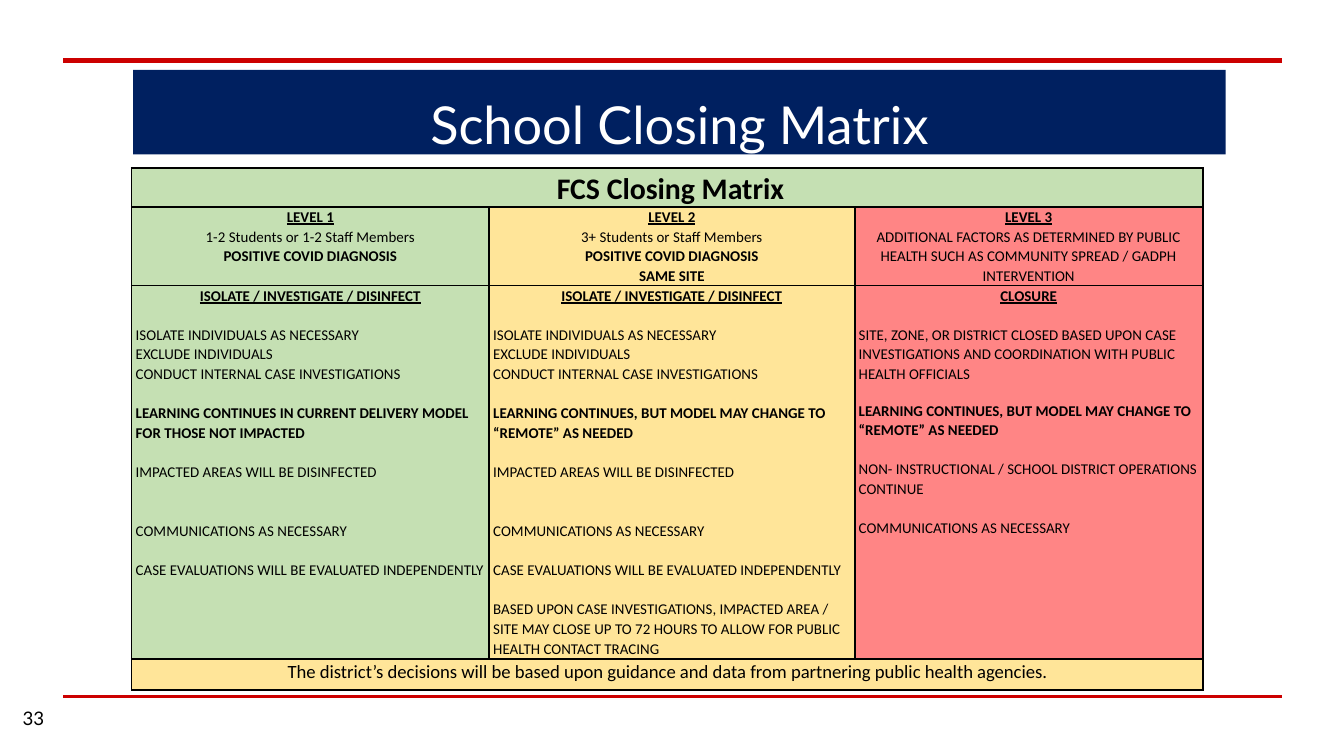
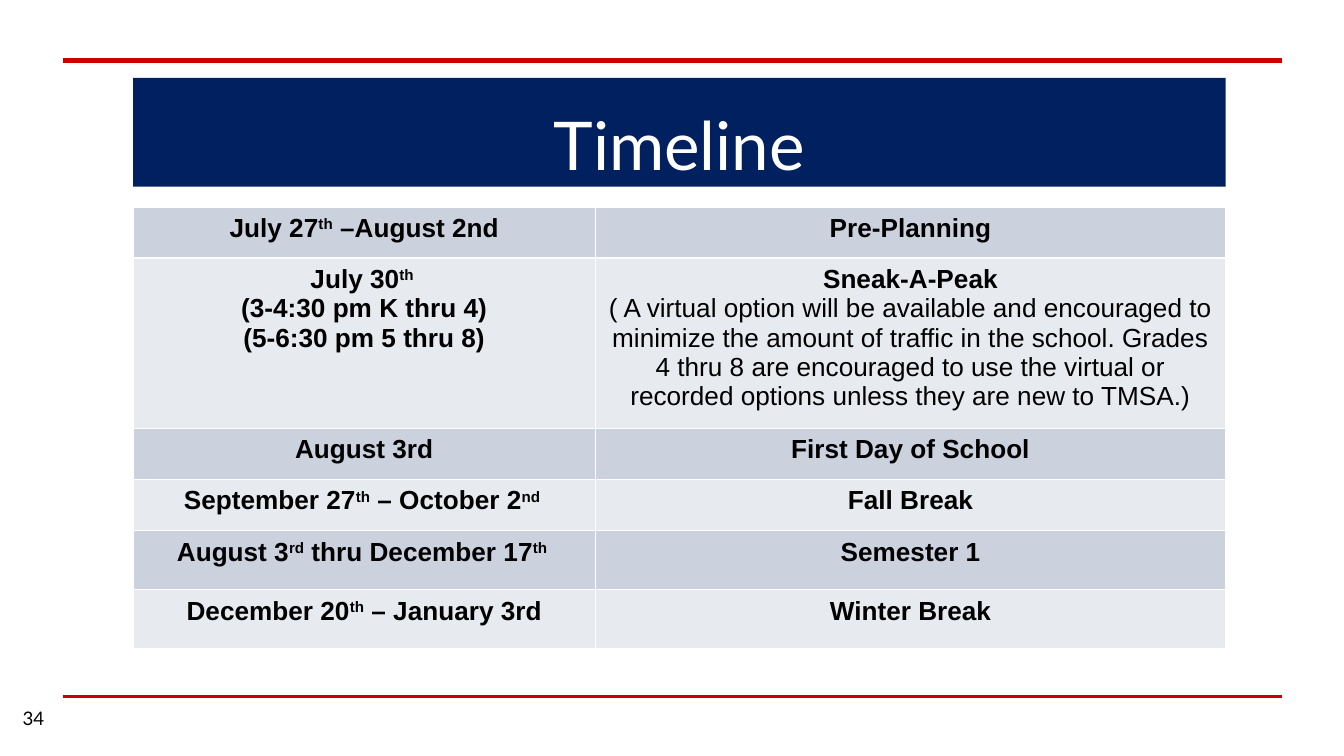
from dataclasses import dataclass

from pptx import Presentation
from pptx.dml.color import RGBColor
from pptx.enum.shapes import MSO_CONNECTOR as CONN, MSO_SHAPE as SHAPE
from pptx.enum.text import MSO_ANCHOR as ANCHOR, PP_ALIGN as ALIGN
from pptx.oxml.ns import qn
from pptx.util import Emu, Pt
from lxml.etree import SubElement

PX = 4572  # 200 px to the inch

# Colours
WHITE = RGBColor(0xFF, 0xFF, 0xFF)
BLACK = RGBColor(0x00, 0x00, 0x00)
RED = RGBColor(0xCC, 0x00, 0x00)
NAVY = RGBColor(0x00, 0x20, 0x60)
GREEN = RGBColor(0xC5, 0xE0, 0xB3)
YELLOW = RGBColor(0xFF, 0xE5, 0x99)
CORAL = RGBColor(0xFF, 0x85, 0x85)
BAND_DARK = RGBColor(0xCC, 0xD1, 0xDE)
BAND_LIGHT = RGBColor(0xE7, 0xEA, 0xEF)

LINE_GAP = 10.5  # one empty line of 8 pt matrix text, in points


@dataclass
class Para:
    """Runs are (text, style) pairs; style letters: b bold, u underline, ^ superscript."""
    runs: list
    align: ALIGN = ALIGN.LEFT
    before: float = 0
    after: float = 0


@dataclass
class Style:
    font: str
    size: float
    color: RGBColor = BLACK
    spacing: float = 1.0


def px(n):
    return Emu(n * PX)


def center(*runs):
    return Para(list(runs), ALIGN.CENTER)


def item(text, style="", before=0):
    return Para([(text, style)], before=before)


def dated(text):
    """Bold centred line; parts between ^ marks are superscript."""
    parts = text.split("^")
    return center(*[(t, "b^" if i % 2 else "b") for i, t in enumerate(parts) if t])


# Text
def write(tf, paras, style):
    for i, para in enumerate(paras):
        p = tf.paragraphs[0] if i == 0 else tf.add_paragraph()
        p.alignment = para.align
        p.line_spacing = style.spacing
        p.space_before, p.space_after = Pt(para.before), Pt(para.after)
        for text, flags in para.runs:
            r = p.add_run()
            r.text = text.rstrip("\n")
            r.font.name, r.font.size = style.font, Pt(style.size)
            r.font.color.rgb = style.color
            r.font.bold = "b" in flags
            r.font.underline = "u" in flags
            if "^" in flags:
                r.font._element.set("baseline", "30000")
            if text.endswith("\n"):
                p.add_line_break()


def set_insets(tf, inset):
    tf.margin_left = tf.margin_right = tf.margin_top = tf.margin_bottom = px(inset)
    tf.word_wrap = True


# Slide frame
def add_rule(s, y, width):
    ln = s.shapes.add_connector(CONN.STRAIGHT, px(94), px(y), px(1908), px(y))
    ln.line.color.rgb = RED
    ln.line.width = Pt(width)
    SubElement(ln._element.spPr, qn("a:effectLst"))


def add_title(s, text, top, height, size):
    sp = s.shapes.add_shape(SHAPE.RECTANGLE, px(198), px(top), px(1626), px(height))
    sp.shadow.inherit = False
    sp.fill.solid()
    sp.fill.fore_color.rgb = NAVY
    sp.line.fill.background()
    tf = sp.text_frame
    set_insets(tf, 20)
    tf.vertical_anchor = ANCHOR.TOP
    write(tf, [Para([(text, "")], ALIGN.CENTER, after=16)],
          Style("Lato", size, WHITE, 1.15))


def add_number(s, number):
    tf = s.shapes.add_textbox(px(14), px(1026), px(120), px(86)).text_frame
    set_insets(tf, 20)
    tf.vertical_anchor = ANCHOR.MIDDLE
    write(tf, [item(str(number))], Style("Lato", 10))


def add_slide(prs, title, top, height, size, number):
    s = prs.slides.add_slide(prs.slide_layouts[6])
    add_rule(s, 1036, 1.5)
    add_rule(s, 90, 3)
    add_title(s, title, top, height, size)
    add_number(s, number)
    return s


# Tables
def add_grid(s, left, top, cols, rows):
    tbl = s.shapes.add_table(len(rows), len(cols), px(left), px(top),
                             px(sum(cols)), px(sum(rows))).table
    tbl.first_row = tbl.horz_banding = False
    for col, w in zip(tbl.columns, cols):
        col.width = px(w)
    for row, h in zip(tbl.rows, rows):
        row.height = px(h)
    return tbl


def style_cell(cell, fill, border, insets):
    cell.fill.solid()
    cell.fill.fore_color.rgb = fill
    cell.margin_left = cell.margin_right = px(insets[0])
    cell.margin_top = cell.margin_bottom = px(insets[1])
    tcPr = cell._tc.get_or_add_tcPr()
    for i, side in enumerate(("a:lnL", "a:lnR", "a:lnT", "a:lnB")):
        ln = SubElement(tcPr, qn(side), w=str(Pt(1)))
        SubElement(SubElement(ln, qn("a:solidFill")), qn("a:srgbClr"), val=str(border))
        tcPr.insert(i, ln)


def add_matrix(s):
    tbl = add_grid(s, 196, 250, [532, 544, 518], [58, 117, 556, 46])
    isolate = "ISOLATE / INVESTIGATE / DISINFECT"
    steps = [item("ISOLATE INDIVIDUALS AS NECESSARY", before=LINE_GAP),
             item("EXCLUDE INDIVIDUALS"),
             item("CONDUCT INTERNAL CASE INVESTIGATIONS")]
    follow_up = [item("IMPACTED AREAS WILL BE DISINFECTED", before=LINE_GAP),
                 item("COMMUNICATIONS AS NECESSARY", before=2 * LINE_GAP),
                 item("CASE EVALUATIONS WILL BE EVALUATED INDEPENDENTLY", before=LINE_GAP)]
    remote = "LEARNING CONTINUES, BUT MODEL MAY CHANGE TO “REMOTE” AS NEEDED"
    diagnosis = center(("POSITIVE COVID DIAGNOSIS", "b"))

    levels = [
        [center(("LEVEL 1\n", "bu"), ("1-2 Students or 1-2 Staff Members", "")), diagnosis],
        [center(("LEVEL 2\n", "bu"), ("3+ Students or Staff Members", "")), diagnosis,
         center(("SAME SITE", "b"))],
        [center(("LEVEL 3\n", "bu"),
                ("ADDITIONAL FACTORS AS DETERMINED BY PUBLIC HEALTH SUCH AS "
                 "COMMUNITY SPREAD / GADPH INTERVENTION", ""))],
    ]
    actions = [
        [center((isolate, "bu")), *steps,
         item("LEARNING CONTINUES IN CURRENT DELIVERY MODEL FOR THOSE NOT IMPACTED",
              "b", LINE_GAP),
         *follow_up],
        [center((isolate, "bu")), *steps, item(remote, "b", LINE_GAP), *follow_up,
         item("BASED UPON CASE INVESTIGATIONS, IMPACTED AREA / SITE MAY CLOSE UP TO "
              "72 HOURS TO ALLOW FOR PUBLIC HEALTH CONTACT TRACING", before=LINE_GAP)],
        [center(("CLOSURE", "bu")),
         item("SITE, ZONE, OR DISTRICT CLOSED BASED UPON CASE INVESTIGATIONS AND "
              "COORDINATION WITH PUBLIC HEALTH OFFICIALS", before=LINE_GAP),
         item(remote, "b", 9),
         item("NON- INSTRUCTIONAL / SCHOOL DISTRICT OPERATIONS CONTINUE", before=LINE_GAP),
         item("COMMUNICATIONS AS NECESSARY", before=LINE_GAP)],
    ]
    heading = [[center((" FCS Closing Matrix", "b"))]]
    closing = [[center(("The district’s decisions will be based upon guidance and data "
                        "from partnering public health agencies.", ""))]]

    by_level = [GREEN, YELLOW, CORAL]
    rows = [(heading, [GREEN] * 3, 16), (levels, by_level, 8),
            (actions, by_level, 8), (closing, [YELLOW] * 3, 10)]
    for y, (texts, fills, size) in enumerate(rows):
        for x, fill in enumerate(fills):
            style_cell(tbl.cell(y, x), fill, BLACK, (6, 0))
        if len(texts) == 1:
            tbl.cell(y, 0).merge(tbl.cell(y, 2))
        for x, paras in enumerate(texts):
            write(tbl.cell(y, x).text_frame, paras, Style("Calibri", size, spacing=1.07))


def add_timeline(s):
    tbl = add_grid(s, 198, 308, [688, 938], [76, 238, 76, 76, 88, 88])
    note = ("( A virtual option will be available and encouraged to minimize the amount "
            "of traffic in the school. Grades 4 thru 8 are encouraged to use the virtual "
            "or recorded options unless they are new to TMSA.)")
    events = [
        (["July 27^th^ –August 2nd"], "Pre-Planning", ""),
        (["July 30^th ^", "(3-4:30 pm K thru 4)", "(5-6:30 pm 5 thru 8)"],
         "Sneak-A-Peak", note),
        (["August 3rd"], "First Day of School", ""),
        (["September 27^th^ – October 2^nd ^"], "Fall Break", ""),
        (["August 3^rd^ thru December 17^th ^"], "Semester 1", ""),
        (["December 20^th^ – January 3rd"], "Winter Break", ""),
    ]
    for y, (dates, event, detail) in enumerate(events):
        about = [dated(event)] + ([center((detail, ""))] if detail else [])
        for x, paras in enumerate(([dated(d) for d in dates], about)):
            cell = tbl.cell(y, x)
            style_cell(cell, BAND_LIGHT if y % 2 else BAND_DARK, WHITE, (20, 10))
            write(cell.text_frame, paras, Style("Arial", 14))


def main():
    prs = Presentation()
    prs.slide_width, prs.slide_height = px(2000), px(1125)
    add_matrix(add_slide(prs, "School Closing Matrix", 104, 126, 28, 33))
    add_timeline(add_slide(prs, "Timeline", 116, 162, 36, 34))
    prs.save("out.pptx")


if __name__ == "__main__":
    main()
